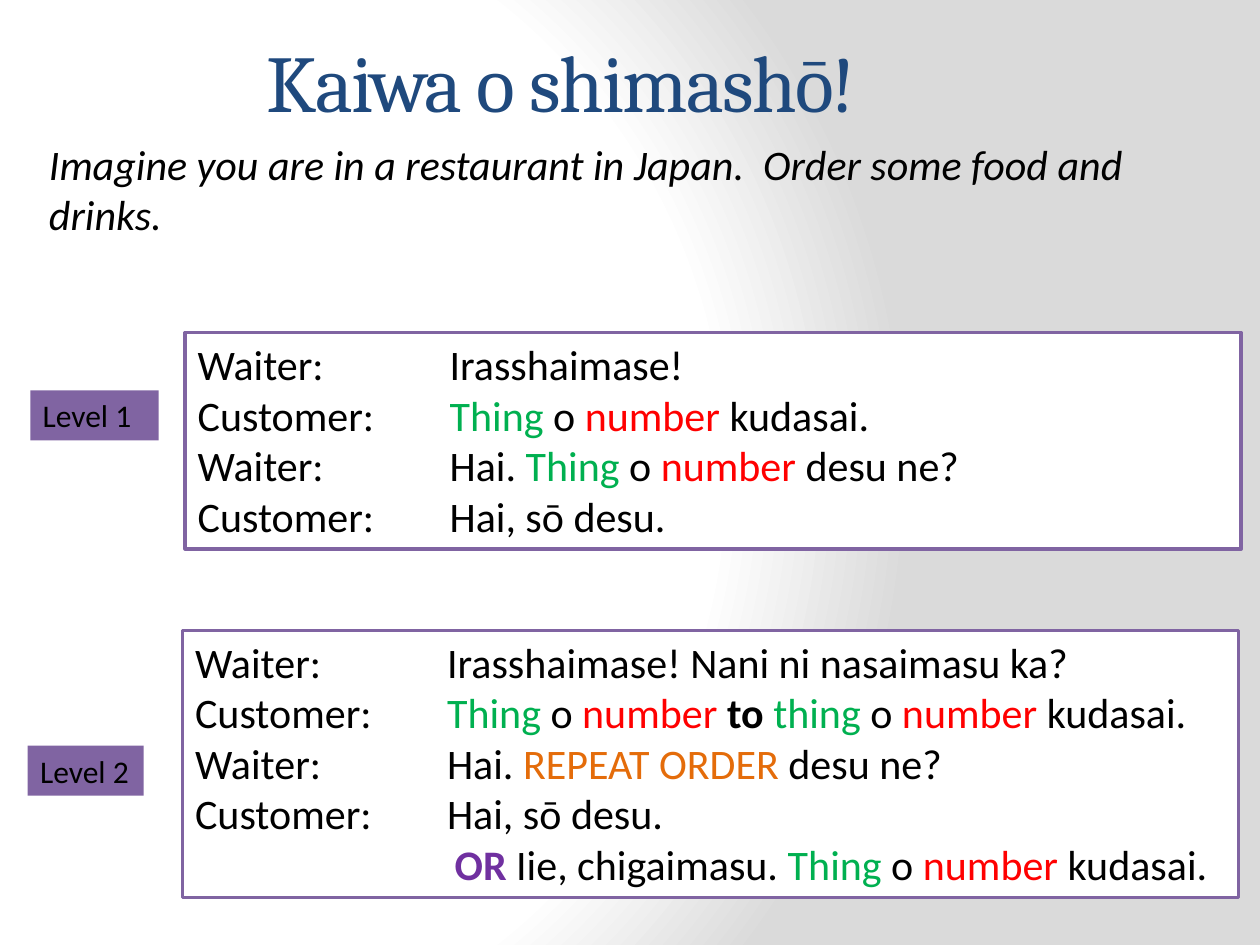
from lxml import etree
from pptx import Presentation
from pptx.dml.color import RGBColor
from pptx.enum.shapes import MSO_SHAPE
from pptx.enum.text import MSO_ANCHOR, MSO_AUTO_SIZE, PP_ALIGN
from pptx.oxml import parse_xml
from pptx.oxml.ns import nsdecls, qn
from pptx.util import Inches, Pt

RECTANGLE = MSO_SHAPE.RECTANGLE
LEFT, CENTER = PP_ALIGN.LEFT, PP_ALIGN.CENTER
TOP, MIDDLE = MSO_ANCHOR.TOP, MSO_ANCHOR.MIDDLE
GROW = MSO_AUTO_SIZE.SHAPE_TO_FIT_TEXT

BLACK, WHITE, NAVY, PURPLE = "000000", "FFFFFF", "1F497D", "8064A2"
GREEN, RED, ORANGE, VIOLET = "00B050", "FF0000", "E46C0A", "7030A0"
SPEECH_TAB = 2
ALTERNATIVE_INDENT = 2.06

THING, NUMBER = ("Thing", GREEN), ("number ", RED)
ORDER = [THING, " o ", NUMBER]
GOODBYE = ("Customer:", ["Hai, sō desu."])
LEVEL_1 = [
    ("Waiter:", ["Irasshaimase!"]),
    ("Customer:", [*ORDER, "kudasai."]),
    ("Waiter:", ["Hai. ", *ORDER, "desu ne?"]),
    GOODBYE,
]
LEVEL_2 = [
    ("Waiter:", ["Irasshaimase! Nani ni nasaimasu ka?"]),
    ("Customer:", [*ORDER, ("to ", BLACK, True), ("thing", GREEN), " o ", NUMBER, "kudasai."]),
    ("Waiter:", ["Hai. ", ("REPEAT ORDER ", ORANGE), "desu ne?"]),
    GOODBYE,
    ("", [("OR ", VIOLET, True), "Iie, chigaimasu. ", *ORDER, "kudasai."]),
]


def color(value):
    return RGBColor.from_string(value)


class DialogueSlide:
    """Builds a dialogue slide, with lengths given as shares of the slide's size."""

    def __init__(self, presentation, font="Calibri"):
        self.width = presentation.slide_width
        self.height = presentation.slide_height
        self.font = font
        self.slide = presentation.slides.add_slide(presentation.slide_layouts[6])

    def place(self, left, top, width, height):
        return (round(left * self.width), round(top * self.height),
                round(width * self.width), round(height * self.height))

    def background(self, stops):
        fill = self.slide.background.fill
        fill.gradient()
        properties = self.slide.background._cSld.bg.bgPr
        old = properties.find(qn("a:gradFill"))
        new = parse_xml(f'<a:gradFill {nsdecls("a")} rotWithShape="1"><a:gsLst/>'
                        '<a:path path="circle"><a:fillToRect l="20000" t="50000" '
                        'r="100000" b="50000"/></a:path></a:gradFill>')
        for position, value in stops:
            stop = etree.SubElement(new[0], qn("a:gs"), pos=str(position * 1000))
            etree.SubElement(stop, qn("a:srgbClr"), val=value)
        properties.replace(old, new)

    def style(self, paragraph, size, align=LEFT, font=None, value=BLACK):
        paragraph.alignment = align
        paragraph.font.name = font or self.font
        paragraph.font.size = Pt(size)
        paragraph.font.color.rgb = color(value)

    def text(self, box, words, size, align=LEFT, anchor=TOP, font=None, value=BLACK):
        shape = self.slide.shapes.add_textbox(*self.place(*box))
        frame = shape.text_frame
        frame.word_wrap = True
        frame.vertical_anchor = anchor
        paragraph = frame.paragraphs[0]
        paragraph.text = words
        self.style(paragraph, size, align, font, value)
        return paragraph

    def title(self, box, words):
        paragraph = self.text(box, words, 46, CENTER, MIDDLE, "Cambria", NAVY)
        paragraph.runs[0].font._element.set("spc", "-100")

    def instruction(self, box, words):
        paragraph = self.text(box, words, 24)
        paragraph.font.italic = True
        paragraph.space_before = Pt(4.8)
        self.indent(paragraph, 0.12)

    def indent(self, paragraph, inches):
        properties = paragraph._p.get_or_add_pPr()
        properties.set("marL", str(Inches(inches)))
        properties.set("indent", "0")

    def rectangle(self, box, fill, line=None, wrap=True):
        shape = self.slide.shapes.add_shape(RECTANGLE, *self.place(*box))
        shape.shadow.inherit = False
        shape.fill.solid()
        shape.fill.fore_color.rgb = color(fill)
        if line:
            shape.line.color.rgb = color(line)
            shape.line.width = Pt(2)
        else:
            shape.line.fill.background()
        frame = shape.text_frame
        frame.word_wrap = wrap
        frame.auto_size = GROW
        frame.vertical_anchor = TOP
        return frame

    def label(self, box, words):
        paragraph = self.rectangle(box, PURPLE, wrap=False).paragraphs[0]
        paragraph.text = words
        self.style(paragraph, 18)

    def dialogue(self, box, lines):
        frame = self.rectangle(box, WHITE, PURPLE)
        for index, (speaker, speech) in enumerate(lines):
            paragraph = frame.add_paragraph() if index else frame.paragraphs[0]
            self.style(paragraph, 24)
            if speaker:
                self.tab(paragraph)
                speech = [f"{speaker}\t", *speech]
            else:
                self.indent(paragraph, ALTERNATIVE_INDENT)
            for part in speech:
                self.run(paragraph, *([part] if isinstance(part, str) else part))

    def tab(self, paragraph):
        stops = parse_xml(f'<a:tabLst {nsdecls("a")}><a:tab pos="{Inches(SPEECH_TAB)}" '
                          'algn="l"/></a:tabLst>')
        paragraph._p.get_or_add_pPr().find(qn("a:defRPr")).addprevious(stops)

    def run(self, paragraph, words, value=BLACK, bold=False):
        run = paragraph.add_run()
        run.text = words
        run.font.color.rgb = color(value)
        run.font.bold = bold
        run.font.size = paragraph.font.size
        run.font.name = self.font


def main():
    presentation = Presentation()
    presentation.slide_width, presentation.slide_height = Inches(10), Inches(7.5)
    page = DialogueSlide(presentation)
    page.background([(0, WHITE), (75, WHITE), (100, "DADADA")])
    page.title((0.03, 0, 0.83, 0.17), "Kaiwa o shimashō!")
    page.instruction((0.017, 0.14, 0.925, 0.133),
                     "Imagine you are in a restaurant in Japan.  Order some food and drinks.")
    page.dialogue((0.147, 0.352, 0.838, 0.229), LEVEL_1)
    page.label((0.024, 0.413, 0.102, 0.053), "Level 1")
    page.dialogue((0.145, 0.667, 0.838, 0.283), LEVEL_2)
    page.label((0.022, 0.789, 0.092, 0.053), "Level 2")
    presentation.save("out.pptx")


if __name__ == "__main__":
    main()
